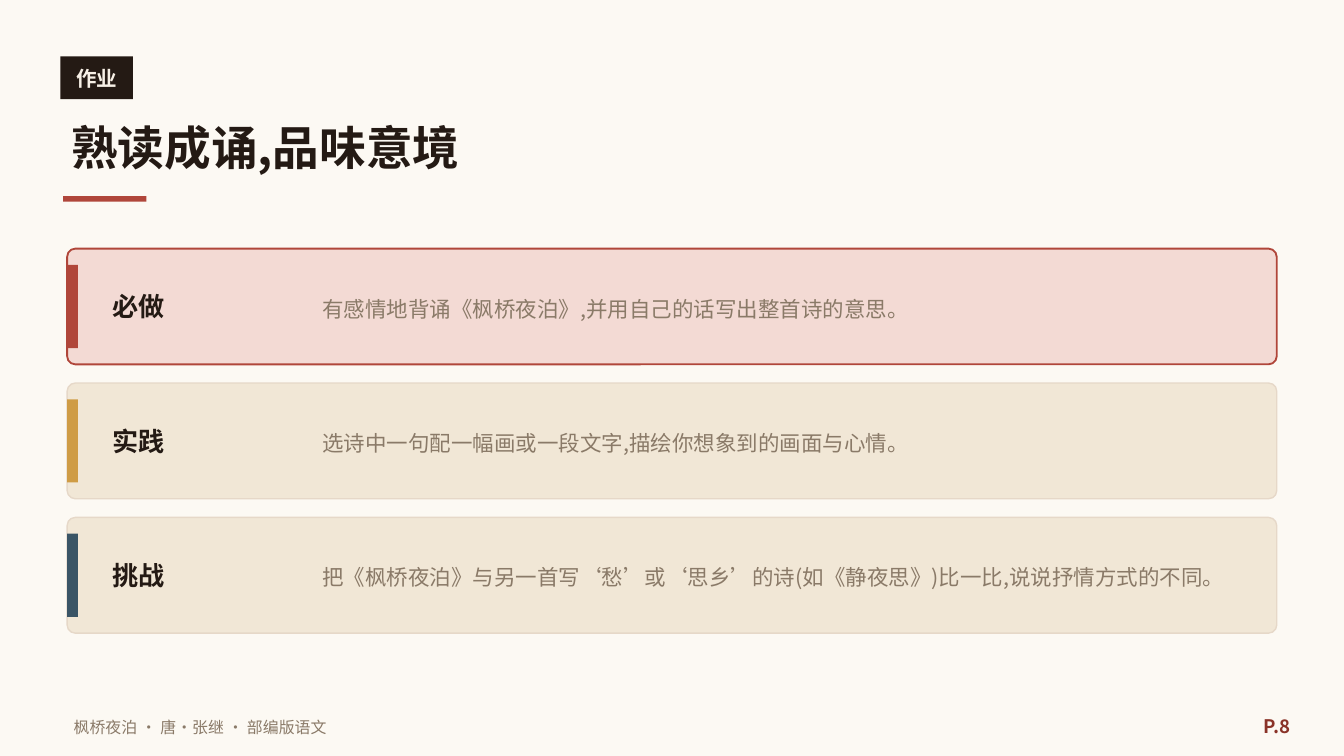
"""Build the homework slide: a title above three task cards."""
from pptx import Presentation
from pptx.dml.color import RGBColor
from pptx.enum.shapes import MSO_SHAPE
from pptx.enum.text import MSO_ANCHOR, PP_ALIGN
from pptx.oxml.ns import qn
from pptx.util import Pt
from lxml.etree import SubElement

FACE = "Noto Sans CJK SC"
INK, RED, GREY = "241A14", "B0463A", "8A7A68"
tint = RGBColor.from_string

deck = Presentation()
deck.slide_width, deck.slide_height = Pt(720), Pt(405)
slide = deck.slides.add_slide(deck.slide_layouts[5])
slide.background.fill.solid()
slide.background.fill.fore_color.rgb = tint("FCF9F3")


def block(kind, box, fill, line=None, width=0):
    shape = slide.shapes.add_shape(kind, *map(Pt, box))
    shape.shadow.inherit = False
    shape.fill.solid()
    shape.fill.fore_color.rgb = tint(fill)
    if line:
        shape.line.color.rgb = tint(line)
        shape.line.width = Pt(width)
    else:
        shape.line.fill.background()
    return shape


def write(text, box, size, color, bold=False, align=PP_ALIGN.LEFT, shape=None):
    shape = shape or slide.shapes.add_textbox(*map(Pt, box))
    shape.left, shape.top, shape.width, shape.height = map(Pt, box)
    frame = shape.text_frame
    frame.word_wrap = True
    frame.vertical_anchor = MSO_ANCHOR.MIDDLE
    frame.text = text
    para = frame.paragraphs[0]
    para.alignment = align
    font = para.font
    font.name, font.size, font.bold = FACE, Pt(size), bold
    font.color.rgb = tint(color)
    SubElement(para._p.pPr.find(qn("a:defRPr")), qn("a:ea"), typeface=FACE)
    return para


block(MSO_SHAPE.RECTANGLE, (32.4, 30.2, 38.9, 23), INK)
write("作业", (32.4, 29.5, 38.9, 24.5), 11, "F7F0E6", True, PP_ALIGN.CENTER)
write("熟读成诵,品味意境", (31, 56.2, 648, 44.6), 25, INK, True,
      shape=slide.shapes.title)
block(MSO_SHAPE.RECTANGLE, (33.8, 105.1, 44.6, 3), RED)

tasks = [
    ("必做", "有感情地背诵《枫桥夜泊》,并用自己的话写出整首诗的意思。",
     RED, "F3DAD4", RED, 1),
    ("实践", "选诗中一句配一幅画或一段文字,描绘你想象到的画面与心情。",
     "CF9C45", "F1E7D6", "E6D8C8", 0.75),
    ("挑战", "把《枫桥夜泊》与另一首写‘愁’或‘思乡’的诗(如《静夜思》)比一比,说说抒情方式的不同。",
     "3A5566", "F1E7D6", "E6D8C8", 0.75),
]
for i, (name, text, mark, fill, line, width) in enumerate(tasks):
    top = 133.2 + 72 * i
    card = block(MSO_SHAPE.ROUNDED_RECTANGLE, (36, top, 648, 62), fill, line, width)
    card.adjustments[0] = 0.07
    block(MSO_SHAPE.RECTANGLE, (36, top + 8.7, 5.8, 44.6), mark)
    write(name, (53.3, top + 7.2, 100.8, 47.5), 14, INK, True)
    para = write(text, (165.6, top + 5.8, 504, 50.4), 11.5, GREY)
    para.line_spacing = Pt(16)

write("枫桥夜泊 · 唐·张继 · 部编版语文", (32.4, 378.7, 432, 21.6), 8.5, GREY)
write("P.8", (655.2, 377.3, 43.2, 23), 10, "8A3328", True, PP_ALIGN.RIGHT)

deck.save("out.pptx")
